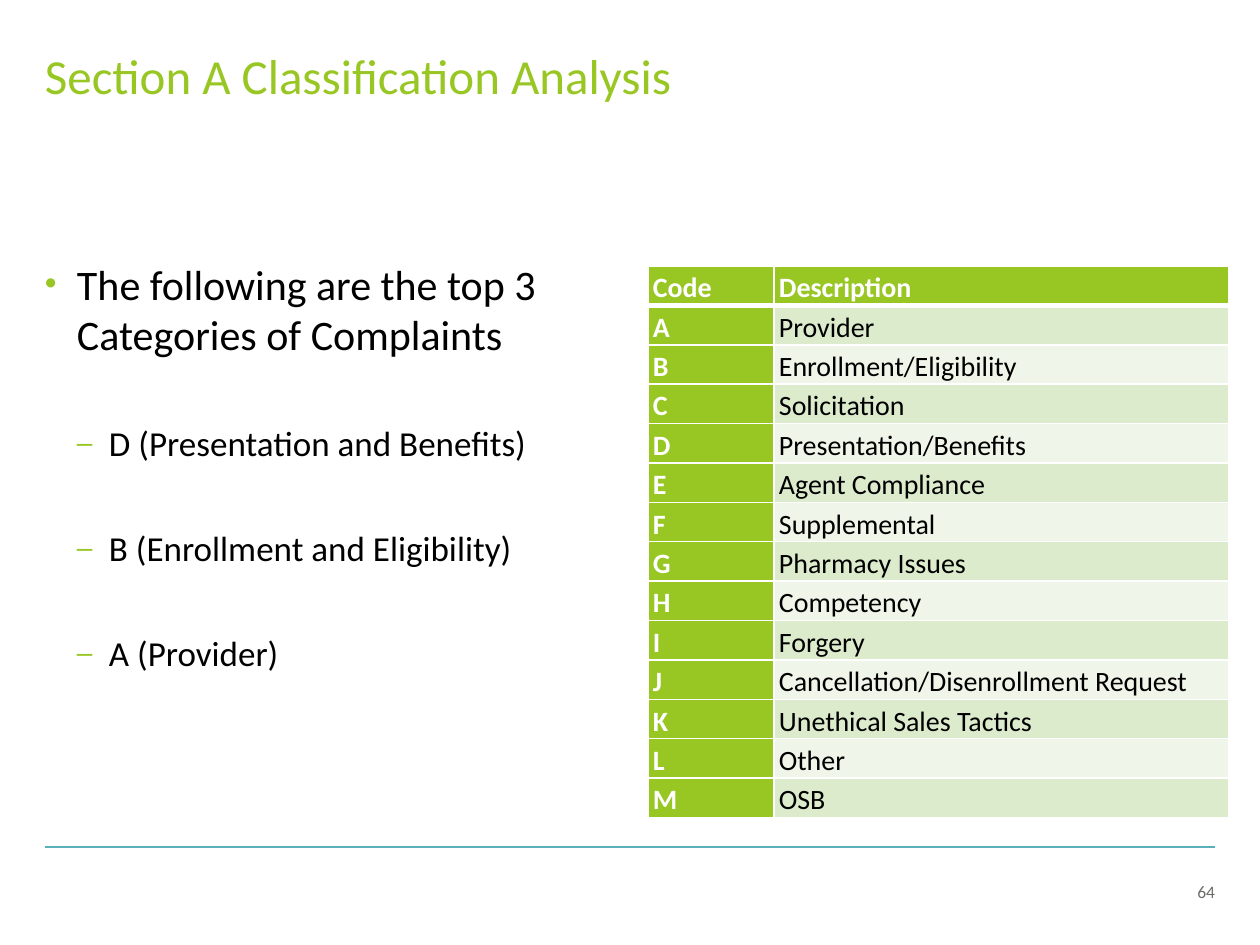
from lxml import etree
from pptx import Presentation
from pptx.dml.color import RGBColor
from pptx.enum.shapes import MSO_CONNECTOR
from pptx.enum.text import MSO_ANCHOR, MSO_AUTO_SIZE, PP_ALIGN
from pptx.oxml.ns import qn
from pptx.util import Pt

STRAIGHT = MSO_CONNECTOR.STRAIGHT
TOP, MIDDLE = MSO_ANCHOR.TOP, MSO_ANCHOR.MIDDLE
LEFT, RIGHT = PP_ALIGN.LEFT, PP_ALIGN.RIGHT
FIXED = MSO_AUTO_SIZE.NONE
EMU_PER_PX = 914400 / 126
FONT = "Calibri"
COLORS = {
    "green": "98C723",
    "teal": "59B0B9",
    "gray": "6D6D66",
    "black": "000000",
    "white": "FFFFFF",
    "dark_band": "DDEBCD",
    "light_band": "EFF5E8",
}
COMPLAINTS = [
    (0, "The following are the top 3 Categories of Complaints"),
    (1, "D (Presentation and Benefits)"),
    (1, "B (Enrollment and Eligibility)"),
    (1, "A (Provider)"),
]
BULLET_LEVELS = [("•", 24, 0), ("–", 20, 36)]
DESCRIPTIONS = [
    "Provider",
    "Enrollment/Eligibility",
    "Solicitation",
    "Presentation/Benefits",
    "Agent Compliance",
    "Supplemental",
    "Pharmacy Issues",
    "Competency",
    "Forgery",
    "Cancellation/Disenrollment Request",
    "Unethical Sales Tactics",
    "Other",
    "OSB",
]


def px(length):
    """Turn pixels into EMU."""
    return round(length * EMU_PER_PX)


def color(name):
    """Look up a named colour."""
    return RGBColor.from_string(COLORS[name])


def format_runs(paragraph, size, color_name, bold=False):
    """Format every run of a paragraph."""
    for run in paragraph.runs:
        run.font.name = FONT
        run.font.size = Pt(size)
        run.font.bold = bold
        run.font.color.rgb = color(color_name)


def place(shape, left, top, width, height):
    """Set the position and size of a shape."""
    shape.left, shape.top = px(left), px(top)
    shape.width, shape.height = px(width), px(height)


def set_frame(text_frame, anchor, margins):
    """Set wrapping, anchor and margins (left, top, right, bottom)."""
    text_frame.word_wrap = True
    text_frame.auto_size = FIXED
    text_frame.vertical_anchor = anchor
    left, top, right, bottom = map(px, margins)
    text_frame.margin_left, text_frame.margin_top = left, top
    text_frame.margin_right, text_frame.margin_bottom = right, bottom


def set_line(shape, text, alignment, size, color_name):
    """Write one formatted line of text into a shape."""
    shape.text_frame.text = text
    paragraph = shape.text_frame.paragraphs[0]
    paragraph.alignment = alignment
    format_runs(paragraph, size, color_name)


def add_bullet(paragraph, character, level):
    """Give a paragraph a green hanging bullet."""
    properties = paragraph._p.get_or_add_pPr()
    properties.set("marL", str(px(32 * (level + 1))))
    properties.set("indent", str(px(-32)))
    bullet_color = etree.SubElement(properties, qn("a:buClr"))
    etree.SubElement(bullet_color, qn("a:srgbClr"), val=COLORS["green"])
    etree.SubElement(properties, qn("a:buSzPct"), val="80000")
    etree.SubElement(properties, qn("a:buFont"), typeface="Arial")
    etree.SubElement(properties, qn("a:buChar"), char=character)


def fill_title(title):
    """Write the slide title."""
    place(title, 45, 33, 1170, 84)
    set_frame(title.text_frame, MIDDLE, (0, 0, 0, 0))
    set_line(title, "Section A Classification Analysis", LEFT, 28, "green")


def fill_body(body):
    """Write the list of top complaint categories."""
    place(body, 45, 186, 586, 673)
    text_frame = body.text_frame
    set_frame(text_frame, TOP, (0, 72, 13, 0))
    text_frame.text = "\n".join(text for _, text in COMPLAINTS)
    for paragraph, (level, _) in zip(text_frame.paragraphs, COMPLAINTS):
        character, size, space_before = BULLET_LEVELS[level]
        paragraph.level = level
        add_bullet(paragraph, character, level)
        paragraph.space_before = Pt(space_before)
        paragraph.alignment = LEFT
        format_runs(paragraph, size, "black")


def add_footer(slide):
    """Add the footer rule and the page number."""
    rule = slide.shapes.add_connector(STRAIGHT, px(45), px(847), px(1215), px(847))
    rule.line.color.rgb = color("teal")
    rule.line.width = Pt(1)
    etree.SubElement(rule._element.spPr, qn("a:effectLst"))
    number = slide.shapes.add_textbox(px(1163), px(874), px(52), px(34))
    set_frame(number.text_frame, MIDDLE, (13, 6, 0, 6))
    set_line(number, "64", RIGHT, 10, "gray")


def add_borders(cell, top_width, bottom_width):
    """Draw white borders round a cell."""
    properties = cell._tc.get_or_add_tcPr()
    widths = {"L": 1, "R": 1, "T": top_width, "B": bottom_width}
    for side, width in widths.items():
        line = etree.SubElement(properties, qn(f"a:ln{side}"), w=str(Pt(width)))
        solid = etree.SubElement(line, qn("a:solidFill"))
        etree.SubElement(solid, qn("a:srgbClr"), val=COLORS["white"])


def format_cell(cell, text, row, column):
    """Write a table cell with its fill and borders."""
    is_heading = row == 0 or column == 0
    band = "dark_band" if row % 2 else "light_band"
    cell.text = text
    cell.margin_left = cell.margin_right = px(5)
    cell.margin_top = cell.margin_bottom = 0
    paragraph = cell.text_frame.paragraphs[0]
    paragraph.line_spacing = 1.15
    format_runs(paragraph, 16, "white" if is_heading else "black", is_heading)
    add_borders(cell, 3 if row == 1 else 1, 3 if row == 0 else 1)
    cell.fill.solid()
    cell.fill.fore_color.rgb = color("green" if is_heading else band)


def add_code_table(slide):
    """Add the table of complaint codes."""
    rows = [("Code", "Description"), *zip("ABCDEFGHIJKLM", DESCRIPTIONS)]
    frame = slide.shapes.add_table(
        len(rows), 2, px(648), px(266), px(581), px(38 * len(rows))
    )
    table = frame.table
    table.columns[0].width, table.columns[1].width = px(126), px(455)
    for row, texts in enumerate(rows):
        for column, text in enumerate(texts):
            format_cell(table.cell(row, column), text, row, column)


def main():
    """Build and save the slide."""
    presentation = Presentation()
    presentation.slide_width, presentation.slide_height = px(1260), px(945)
    slide = presentation.slides.add_slide(presentation.slide_layouts[1])
    fill_title(slide.shapes.title)
    fill_body(slide.placeholders[1])
    add_footer(slide)
    add_code_table(slide)
    presentation.save("out.pptx")


if __name__ == "__main__":
    main()
